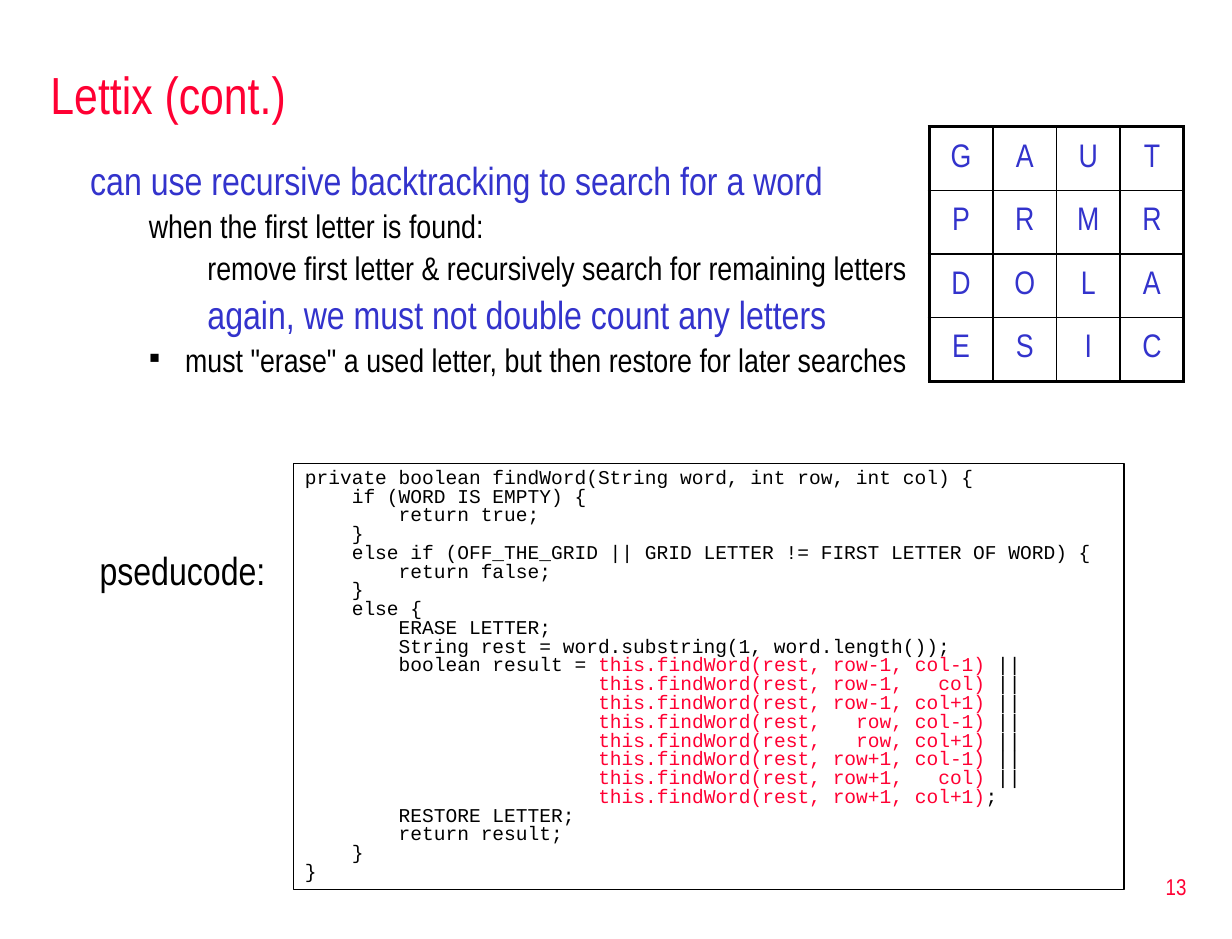
from itertools import product

from lxml import etree
from pptx import Presentation
from pptx.dml.color import RGBColor
from pptx.enum.shapes import MSO_SHAPE
from pptx.enum.text import MSO_ANCHOR, PP_ALIGN
from pptx.oxml.ns import qn
from pptx.util import Inches, Pt

RECT = MSO_SHAPE.RECTANGLE
TOP, MIDDLE = MSO_ANCHOR.TOP, MSO_ANCHOR.MIDDLE
LEFT, CENTER, RIGHT = PP_ALIGN.LEFT, PP_ALIGN.CENTER, PP_ALIGN.RIGHT
TITLE_ONLY = 5

COLORS = {"red": "FF0033", "blue": "3333CC", "black": "000000", "white": "FFFFFF"}
SANS, MONO = "Arial Narrow", "Courier New"

BOARD = ["GAUT", "PRMR", "DOLA", "ESIC"]
BOARD_SIZE = 2.17

BULLETS = [
    ("can use recursive backtracking to search for a word", 0, 24, "blue", 0, 0, None),
    ("when the first letter is found:", 1, 20, "black", 0.81, -0.31, None),
    ("remove first letter & recursively search for remaining letters", 2, 20, "black", 1, 0, None),
    ("again, we must not double count any letters", 2, 24, "blue", 1, 0, None),
    ('must "erase" a used letter, but then restore for later searches', 1, 20, "black", 0.81, -0.31, "▪"),
]

CODE_START = """private boolean findWord(String word, int row, int col) {
    if (WORD IS EMPTY) {
        return true;
    }
    else if (OFF_THE_GRID || GRID LETTER != FIRST LETTER OF WORD) {
        return false;
    }
    else {
        ERASE LETTER;
        String rest = word.substring(1, word.length());"""
RESULT = "        boolean result = "
CODE_END = """        RESTORE LETTER;
        return result;
    }
}"""


def rgb(name):
    return RGBColor.from_string(COLORS[name])


def add_run(p, text, size, color, font=SANS):
    r = p.add_run()
    r.text = text
    r.font.size = Pt(size)
    r.font.name = font
    r.font.color.rgb = rgb(color)


def add_text(slide, box, text, size, color, align=LEFT, anchor=TOP):
    tf = slide.shapes.add_textbox(*map(Inches, box)).text_frame
    tf.word_wrap = True
    tf.vertical_anchor = anchor
    p = tf.paragraphs[0]
    p.alignment = align
    add_run(p, text, size, color)


def add_title(slide, text):
    sp = slide.shapes.title
    sp.left, sp.top, sp.width, sp.height = map(Inches, (0.33, 0.42, 9.92, 0.75))
    tf = sp.text_frame
    tf.vertical_anchor = MIDDLE
    p = tf.paragraphs[0]
    p.alignment = LEFT
    add_run(p, text, 32, "red")


def add_bullets(slide):
    tf = slide.shapes.add_textbox(*map(Inches, (0.67, 1.33, 9.33, 2.42))).text_frame
    tf.word_wrap = True
    for i, (text, level, size, color, margin, indent, bullet) in enumerate(BULLETS):
        p = tf.add_paragraph() if i else tf.paragraphs[0]
        p.level = level
        p.line_spacing = 0.9
        p.space_before = Pt(size * 0.2)
        pPr = p._p.get_or_add_pPr()
        pPr.set("marL", str(Inches(margin)))
        pPr.set("indent", str(Inches(indent)))
        if bullet:
            etree.SubElement(pPr, qn("a:buFont"), typeface=SANS)
            etree.SubElement(pPr, qn("a:buChar"), char=bullet)
        else:
            etree.SubElement(pPr, qn("a:buNone"))
        add_run(p, text, size, color)


def code_lines():
    lines = [[(line, "black")] for line in CODE_START.splitlines()]
    steps = ("-1", "", "+1")
    calls = [f"this.findWord(rest, {'row' + dr:>5}, {'col' + dc:>5})"
             for dr, dc in product(steps, steps) if dr or dc]
    for call in calls:
        lead = RESULT if call is calls[0] else " " * len(RESULT)
        gap, tail = ("", ";") if call is calls[-1] else (" ", "||")
        lines.append([(lead, "black"), (call + gap, "red"), (tail, "black")])
    return lines + [[(line, "black")] for line in CODE_END.splitlines()]


def add_code(slide):
    sp = slide.shapes.add_shape(RECT, *map(Inches, (2.5, 3.95, 7.08, 3.63)))
    sp.shadow.inherit = False
    sp.fill.background()
    sp.line.color.rgb = rgb("black")
    sp.line.width = Pt(1)
    tf = sp.text_frame
    tf.word_wrap = True
    tf.vertical_anchor = TOP
    for i, line in enumerate(code_lines()):
        p = tf.add_paragraph() if i else tf.paragraphs[0]
        p.alignment = LEFT
        p.line_spacing = 0.8
        for text, color in line:
            add_run(p, text, 12, color, MONO)


def set_border(cell, side, width):
    ln = etree.SubElement(cell._tc.get_or_add_tcPr(), qn(f"a:ln{side}"), w=str(Pt(width)))
    fill = etree.SubElement(ln, qn("a:solidFill"))
    etree.SubElement(fill, qn("a:srgbClr"), val=COLORS["black"])


def add_board(slide):
    n = len(BOARD)
    size = Inches(BOARD_SIZE)
    table = slide.shapes.add_table(n, n, Inches(7.92), Inches(1.08), size, size).table
    for i in range(n):
        table.columns[i].width = table.rows[i].height = Inches(BOARD_SIZE / n)
    for row, col in product(range(n), repeat=2):
        cell = table.cell(row, col)
        outer = {"L": col == 0, "R": col == n - 1, "T": row == 0, "B": row == n - 1}
        for side, thick in outer.items():
            set_border(cell, side, 2.25 if thick else 1)
        cell.fill.solid()
        cell.fill.fore_color.rgb = rgb("white")
        cell.vertical_anchor = MIDDLE
        p = cell.text_frame.paragraphs[0]
        p.alignment = CENTER
        add_run(p, BOARD[row][col], 20, "blue")


def main():
    prs = Presentation()
    prs.slide_width, prs.slide_height = Inches(10.5), Inches(8)
    slide = prs.slides.add_slide(prs.slide_layouts[TITLE_ONLY])
    add_text(slide, (8.02, 7.29, 2.19, 0.53), "13", 14, "red", RIGHT, MIDDLE)
    add_title(slide, "Lettix (cont.)")
    add_bullets(slide)
    add_code(slide)
    add_text(slide, (0.75, 4.61, 1.67, 0.5), "pseducode:", 24, "black")
    add_board(slide)
    prs.save("out.pptx")


if __name__ == "__main__":
    main()
